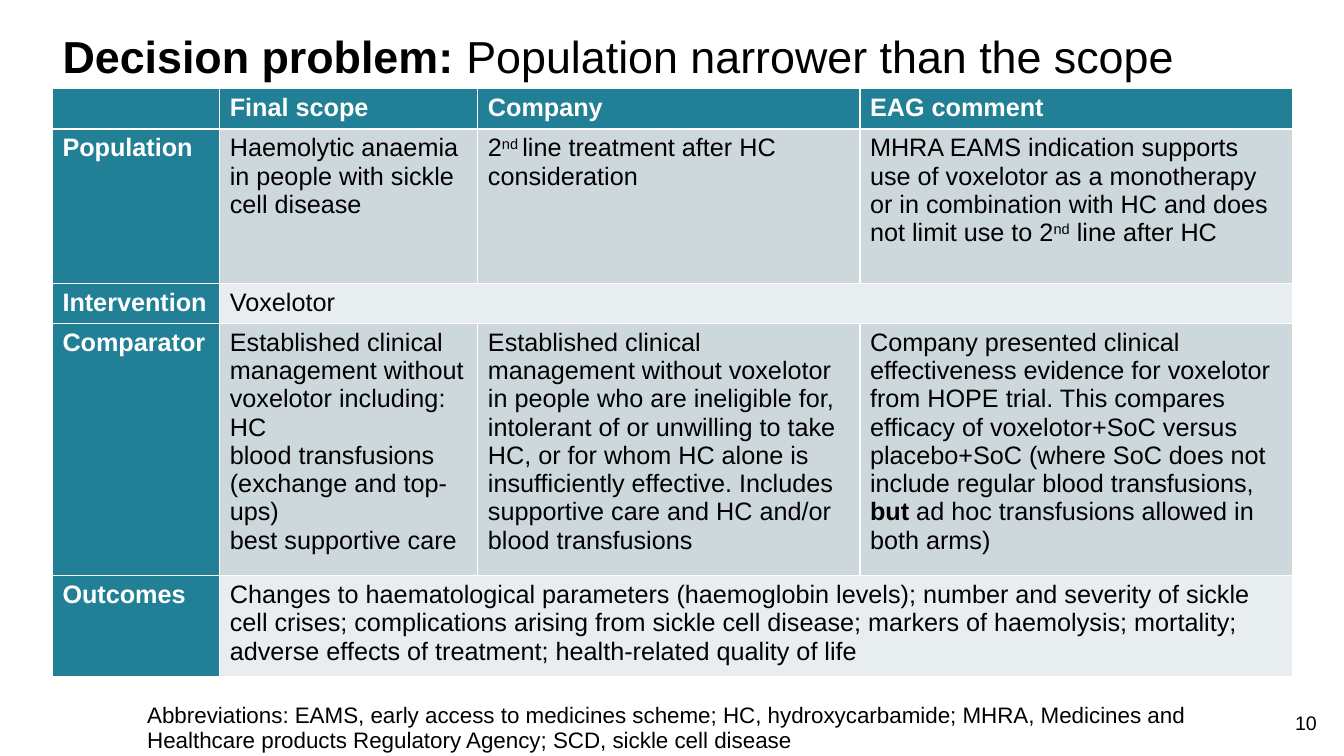
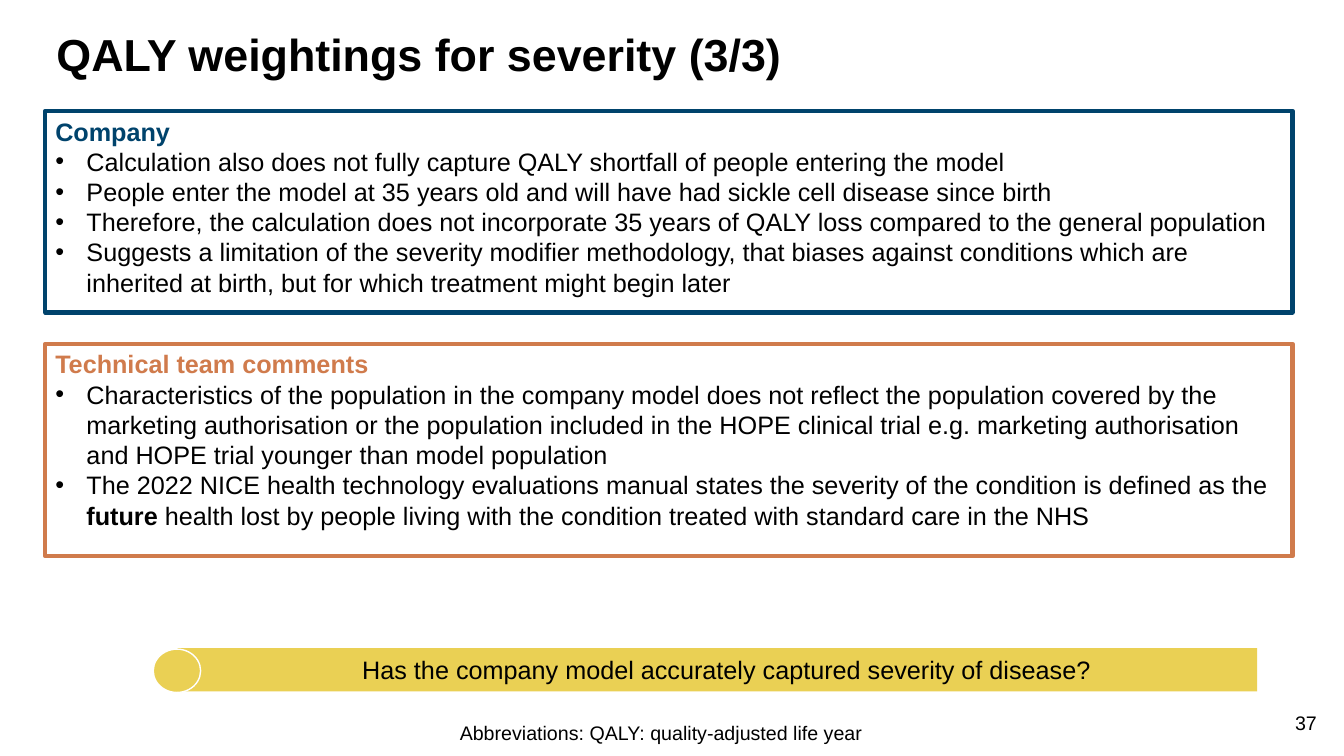
from dataclasses import dataclass
from typing import NamedTuple

from pptx import Presentation
from pptx.dml.color import RGBColor
from pptx.enum.shapes import MSO_SHAPE
from pptx.enum.text import MSO_ANCHOR, MSO_AUTO_SIZE, PP_ALIGN
from pptx.oxml.ns import qn
from pptx.util import Inches, Pt
from lxml import etree

BLACK = RGBColor(0x00, 0x00, 0x00)
WHITE = RGBColor(0xFF, 0xFF, 0xFF)
TEAL = RGBColor(0x22, 0x80, 0x96)
BAND_DARK = RGBColor(0xCD, 0xD8, 0xDD)
BAND_LIGHT = RGBColor(0xE8, 0xED, 0xEF)
NAVY = RGBColor(0x00, 0x43, 0x6C)
ORANGE = RGBColor(0xD0, 0x7B, 0x4C)
YELLOW = RGBColor(0xEA, 0xD0, 0x54)

FONT = "Arial"
TEXT_SIZE = 18
BULLET_INDENT = Inches(0.31)
TITLE_AND_BODY = 1
LEFT, CENTER, RIGHT = PP_ALIGN.LEFT, PP_ALIGN.CENTER, PP_ALIGN.RIGHT
TOP, MIDDLE = MSO_ANCHOR.TOP, MSO_ANCHOR.MIDDLE
NO_FIT = MSO_AUTO_SIZE.NONE
RECTANGLE, OVAL = MSO_SHAPE.RECTANGLE, MSO_SHAPE.OVAL


class Span(NamedTuple):
    text: str
    bold: bool = False
    superscript: bool = False


class Area(NamedTuple):
    left: float
    top: float
    width: float
    height: float

    def lengths(self):
        return [Inches(value) for value in self]


Line = str | list[Span]


@dataclass
class Panel:
    area: Area
    colour: RGBColor
    heading: str
    bullets: list[Line]


@dataclass
class Row:
    height: float
    label: str
    cells: list[list[Line]]


PAGE_NUMBER_AREA = Area(12.65, 7, 0.51, 0.4)
TABLE_AREA = Area(0.52, 0.88, 12.3, 5.64)
COLUMN_WIDTHS = [1.66, 2.56, 3.79, 4.29]
HEADER = Row(0.38, "", [["Final scope"], ["Company"], ["EAG comment"]])
# A row with one cell spans all columns after its label.
ROWS = [
    Row(1.53, "Population", [
        ["Haemolytic anaemia in people with sickle cell disease"],
        [[Span("2"), Span("nd ", superscript=True),
          Span("line treatment after HC consideration")]],
        [[Span("MHRA EAMS indication supports use of voxelotor as a monotherapy "
               "or in combination with HC and does not limit use to 2"),
          Span("nd", superscript=True), Span(" line after HC")]],
    ]),
    Row(0.38, "Intervention", [["Voxelotor"]]),
    Row(2.39, "Comparator", [
        ["Established clinical management without voxelotor including:", "HC",
         "blood transfusions (exchange and top-ups)", "best supportive care"],
        ["Established clinical management without voxelotor in people who are "
         "ineligible for, intolerant of or unwilling to take HC, or for whom HC "
         "alone is insufficiently effective. Includes supportive care and HC "
         "and/or blood transfusions"],
        [[Span("Company presented clinical effectiveness evidence for voxelotor "
               "from HOPE trial. This compares efficacy of voxelotor+SoC versus "
               "placebo+SoC (where SoC does not include regular blood "
               "transfusions, "),
          Span("but", bold=True),
          Span(" ad hoc transfusions allowed in both arms)")]],
    ]),
    Row(0.96, "Outcomes", [
        ["Changes to haematological parameters (haemoglobin levels); number and "
         "severity of sickle cell crises; complications arising from sickle cell "
         "disease; markers of haemolysis; mortality; adverse effects of "
         "treatment; health-related quality of life"],
    ]),
]

PANELS = [
    Panel(Area(0.45, 1.1, 12.37, 2), NAVY, "Company", [
        "Calculation also does not fully capture QALY shortfall of people "
        "entering the model",
        "People enter the model at 35 years old and will have had sickle cell "
        "disease since birth",
        "Therefore, the calculation does not incorporate 35 years of QALY loss "
        "compared to the general population",
        "Suggests a limitation of the severity modifier methodology, that biases "
        "against conditions which are inherited at birth, but for which "
        "treatment might begin later",
    ]),
    Panel(Area(0.45, 3.41, 12.37, 2.11), ORANGE, "Technical team comments", [
        "Characteristics of the population in the company model does not reflect "
        "the population covered by the marketing authorisation or the population "
        "included in the HOPE clinical trial e.g. marketing authorisation and "
        "HOPE trial younger than model population",
        [Span("The 2022 NICE health technology evaluations manual states the "
              "severity of the condition is defined as the "),
         Span("future", bold=True),
         Span(" health lost by people living with the condition treated with "
              "standard care in the NHS")],
    ]),
]


def write(para, line: Line, size: float = TEXT_SIZE, colour: RGBColor = BLACK,
          bold: bool = False, align=LEFT) -> None:
    """Fill a paragraph with plain text or with spans that vary its style."""
    para.alignment = align
    para.space_before = Pt(0)
    font = para.font
    font.name, font.size, font.bold = FONT, Pt(size), bold
    font.color.rgb = colour
    for part in [Span(line)] if isinstance(line, str) else line:
        span = para.add_run()
        span.text = part.text
        if part.bold:
            span.font.bold = True
        if part.superscript:
            span._r.get_or_add_rPr().set("baseline", "30000")


def set_bullet(para, symbol: str = "") -> None:
    """Hang the paragraph from a bullet, or clear an inherited one."""
    properties = para._p.get_or_add_pPr()
    indent = BULLET_INDENT if symbol else 0
    properties.set("marL", str(indent))
    properties.set("indent", str(-indent))
    if symbol:
        etree.SubElement(properties, qn("a:buFont")).set("typeface", FONT)
        etree.SubElement(properties, qn("a:buChar")).set("char", symbol)
    else:
        etree.SubElement(properties, qn("a:buNone"))


def fill_placeholder(box, area: Area, line: Line, size: float,
                     bold: bool = False) -> None:
    box.left, box.top, box.width, box.height = area.lengths()
    frame = box.text_frame
    frame.word_wrap = True
    frame.auto_size = NO_FIT
    frame.vertical_anchor = TOP
    para = frame.paragraphs[0]
    set_bullet(para)
    para.line_spacing = 0.9
    write(para, line, size, bold=bold)


def add_page(deck, title: Line, title_area: Area, abbreviations: str,
             abbreviations_area: Area, abbreviations_size: float, number: int):
    page = deck.slides.add_slide(deck.slide_layouts[TITLE_AND_BODY])
    fill_placeholder(page.shapes.title, title_area, title, 32,
                     bold=isinstance(title, str))
    fill_placeholder(page.placeholders[1], abbreviations_area, abbreviations,
                     abbreviations_size)
    box = page.shapes.add_textbox(*PAGE_NUMBER_AREA.lengths())
    box.text_frame.word_wrap = True
    write(box.text_frame.paragraphs[0], str(number), 14, align=RIGHT)
    return page


def add_block(page, preset, area: Area, fill: RGBColor | None = None,
              line: RGBColor | None = None, line_width: float = 1):
    shape = page.shapes.add_shape(preset, *area.lengths())
    shape.shadow.inherit = False
    if fill is None:
        shape.fill.background()
    else:
        shape.fill.solid()
        shape.fill.fore_color.rgb = fill
    if line is None:
        shape.line.fill.background()
    else:
        shape.line.color.rgb = line
        shape.line.width = Pt(line_width)
    return shape


def add_panel(page, panel: Panel) -> None:
    frame = add_block(page, RECTANGLE, panel.area, line=panel.colour,
                      line_width=3).text_frame
    frame.word_wrap = True
    frame.vertical_anchor = TOP
    write(frame.paragraphs[0], panel.heading, colour=panel.colour, bold=True)
    for bullet in panel.bullets:
        para = frame.add_paragraph()
        set_bullet(para, "•")
        write(para, bullet)


def add_question(page, question: str) -> None:
    band = add_block(page, RECTANGLE, Area(1.76, 6.43, 10.71, 0.43), YELLOW)
    frame = band.text_frame
    frame.word_wrap = True
    frame.margin_left = Inches(0.28)
    frame.vertical_anchor = MIDDLE
    write(frame.paragraphs[0], question, align=CENTER)
    add_block(page, OVAL, Area(1.52, 6.44, 0.47, 0.43), YELLOW, WHITE)


def fill_cell(cell, lines: list[Line], fill: RGBColor, heading: bool) -> None:
    cell.fill.solid()
    cell.fill.fore_color.rgb = fill
    frame = cell.text_frame
    for index, line in enumerate(lines):
        para = frame.add_paragraph() if index else frame.paragraphs[0]
        write(para, line, colour=WHITE if heading else BLACK, bold=heading)


def add_scope_table(page) -> None:
    rows = [HEADER, *ROWS]
    table = page.shapes.add_table(len(rows), len(COLUMN_WIDTHS),
                                  *TABLE_AREA.lengths()).table
    for column, width in zip(table.columns, COLUMN_WIDTHS):
        column.width = Inches(width)
    for index, row in enumerate(rows):
        table.rows[index].height = Inches(row.height)
        is_header = index == 0
        band = TEAL if is_header else BAND_DARK if index % 2 else BAND_LIGHT
        if len(row.cells) == 1:
            table.cell(index, 1).merge(table.cell(index, len(COLUMN_WIDTHS) - 1))
        fill_cell(table.cell(index, 0), [row.label], TEAL, heading=True)
        for column, lines in enumerate(row.cells, start=1):
            fill_cell(table.cell(index, column), lines, band, is_header)


def main() -> None:
    deck = Presentation()
    deck.slide_width, deck.slide_height = Inches(13.33), Inches(7.5)

    scope_page = add_page(
        deck,
        [Span("Decision problem: ", bold=True),
         Span("Population narrower than the scope")],
        Area(0.52, 0.29, 12.44, 1.18),
        "Abbreviations: EAMS, early access to medicines scheme; HC, "
        "hydroxycarbamide; MHRA, Medicines and Healthcare products Regulatory "
        "Agency; SCD, sickle cell disease",
        Area(1.36, 6.94, 10.77, 0.4), 16, 10)
    add_scope_table(scope_page)

    severity_page = add_page(
        deck, "QALY weightings for severity (3/3)",
        Area(0.46, 0.28, 12.43, 1.18),
        "Abbreviations: QALY: quality-adjusted life year",
        Area(4.46, 7.13, 5.3, 0.43), 14, 37)
    for panel in PANELS:
        add_panel(severity_page, panel)
    add_question(severity_page, "Has the company model accurately captured "
                                "severity of disease?")
    deck.save("out.pptx")


if __name__ == "__main__":
    main()
